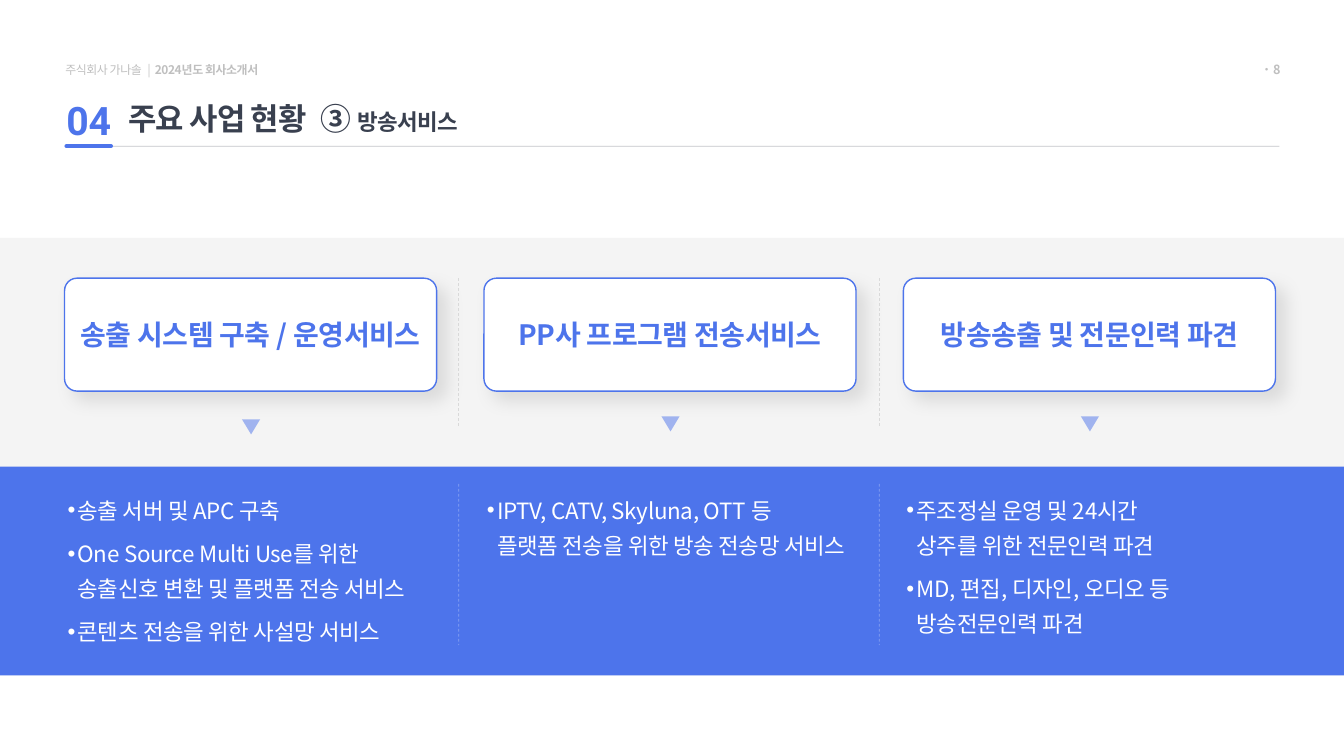
from dataclasses import dataclass, replace

from lxml.etree import SubElement
from pptx import Presentation
from pptx.dml.color import RGBColor
from pptx.enum.dml import MSO_LINE
from pptx.enum.shapes import MSO_CONNECTOR, MSO_SHAPE
from pptx.enum.text import MSO_ANCHOR, PP_ALIGN
from pptx.oxml.ns import qn
from pptx.util import Emu, Pt

PX = 9144  # 100 px to the inch
COLUMN_STEP = 416
COLUMNS = (
    ("송출 시스템 구축 / 운영서비스", 416,
     ("송출 서버 및 APC 구축",
      "One Source Multi Use를 위한\v송출신호 변환 및 플랫폼 전송 서비스",
      "콘텐츠 전송을 위한 사설망 서비스")),
    ("PP사 프로그램 전송서비스", 413,
     ("IPTV, CATV, Skyluna, OTT 등\v플랫폼 전송을 위한 방송 전송망 서비스",)),
    ("방송송출 및 전문인력 파견", 413,
     ("주조정실 운영 및 24시간\v상주를 위한 전문인력 파견",
      "MD, 편집, 디자인, 오디오 등\v방송전문인력 파견")),
)


@dataclass(frozen=True)
class TextStyle:
    size: float
    color: str
    bold: bool = False
    spacing: float = 0
    latin: str = "Noto Sans CJK KR"


class Theme:
    blue = "4D74EB"
    ink = "39404F"
    white = "FFFFFF"
    band = "F2F2F2"
    divider = "D9D9D9"
    asian = "Noto Sans CJK KR"
    company = TextStyle(8.5, "BFBFBF", spacing=-0.3)
    header = replace(company, bold=True)
    separator = replace(header, color=divider)
    page = TextStyle(9, "BFBFBF", spacing=-0.3)
    number = TextStyle(28, blue, bold=True, latin="Roboto")
    title = TextStyle(22, ink, bold=True, spacing=-0.5, latin="Roboto")
    subtitle = replace(title, size=16, latin=asian)
    card = TextStyle(20, blue, bold=True, spacing=-0.3)
    body = TextStyle(16, white, spacing=-0.2)


def px(*lengths):
    return [Emu(length * PX) for length in lengths]


def set_font(font, style):
    font.size = Pt(style.size)
    font.bold = style.bold
    font.color.rgb = RGBColor.from_string(style.color)
    font.name = style.latin
    properties = font._rPr
    properties.set("spc", str(round(style.spacing * 100)))
    SubElement(properties, qn("a:ea"), typeface=Theme.asian)


def set_alpha(fill_parent, percent):
    color = fill_parent.find(qn("a:solidFill"))[0]
    SubElement(color, qn("a:alpha"), val=str(percent * 1000))


def add_block(slide, kind, box, color, alpha=100):
    shape = slide.shapes.add_shape(kind, *px(*box))
    shape.shadow.inherit = False
    shape.fill.solid()
    shape.fill.fore_color.rgb = RGBColor.from_string(color)
    shape.line.fill.background()
    if alpha < 100:
        set_alpha(shape._element.spPr, alpha)
    return shape


def add_line(slide, start, end, color, width=0.5, alpha=100, dashed=False):
    connector = slide.shapes.add_connector(MSO_CONNECTOR.STRAIGHT, *px(*start, *end))
    connector.line.width = Pt(width)
    connector.line.color.rgb = RGBColor.from_string(color)
    if dashed:
        connector.line.dash_style = MSO_LINE.DASH
    if alpha < 100:
        set_alpha(connector.line._ln, alpha)
    SubElement(connector._element.spPr, qn("a:effectLst"))
    return connector


def add_text_box(slide, box, anchor=MSO_ANCHOR.MIDDLE, margins=(0, 0)):
    text_box = slide.shapes.add_textbox(*px(*box))
    frame = text_box.text_frame
    frame.word_wrap = False
    frame.vertical_anchor = anchor
    frame.margin_left, frame.margin_top = px(*margins)
    frame.margin_right, frame.margin_bottom = px(*margins)
    return frame


def add_runs(paragraph, pieces):
    for text, style in pieces:
        run = paragraph.add_run()
        run.text = text
        set_font(run.font, style)


def add_header(slide):
    add_line(slide, (107, 145), (1269, 145), Theme.ink, alpha=30)
    accent = add_line(slide, (66, 145), (110, 145), Theme.blue, width=3)
    accent.line._ln.set("cap", "rnd")

    company = add_text_box(slide, (55, 57, 233, 24), MSO_ANCHOR.TOP, (10, 5))
    add_runs(company.paragraphs[0], (
        ("주식회사 가나솔", Theme.company),
        (" ", replace(Theme.company, spacing=2)),
        ("|", Theme.separator),
        (" ", replace(Theme.separator, spacing=1)),
        ("2024년도 회사소개서", Theme.header),
    ))
    page = add_text_box(slide, (1119, 59, 151, 20)).paragraphs[0]
    page.alignment = PP_ALIGN.RIGHT
    add_runs(page, (("・", Theme.page), ("8", replace(Theme.page, bold=True))))

    title = add_text_box(slide, (127, 89, 1132, 57)).paragraphs[0]
    add_runs(title, (
        ("주요 사업 현황", Theme.title),
        (" ", replace(Theme.title, spacing=5)),
        ("③ ", Theme.title),
        ("방송서비스", Theme.subtitle),
    ))
    number = add_text_box(slide, (64, 90, 48, 57)).paragraphs[0]
    number.text = "04"
    number.alignment = PP_ALIGN.CENTER
    set_font(number.font, Theme.number)


def add_soft_shadow(shape):
    effects = shape._element.spPr.find(qn("a:effectLst"))
    shadow = SubElement(effects, qn("a:outerShdw"), blurRad=str(Pt(13)),
                        dist=str(Pt(9)), dir="2700000", algn="tl", rotWithShape="0")
    color = SubElement(shadow, qn("a:srgbClr"), val="000000")
    SubElement(color, qn("a:alpha"), val="10000")


def add_card(slide, left, heading):
    card = add_block(slide, MSO_SHAPE.ROUNDED_RECTANGLE, (left, 276, 369, 112), Theme.white)
    card.adjustments[0] = 0.11
    card.line.width = Pt(1)
    card.line.color.rgb = RGBColor.from_string(Theme.blue)
    add_soft_shadow(card)
    card.text_frame.word_wrap = True
    card.text_frame.vertical_anchor = MSO_ANCHOR.MIDDLE
    paragraph = card.text_frame.paragraphs[0]
    paragraph.text = heading
    paragraph.alignment = PP_ALIGN.CENTER
    paragraph.space_after = Pt(2)
    set_font(paragraph.font, Theme.card)


def add_bullets(slide, left, items):
    frame = add_text_box(slide, (left, 485, 391, 150), MSO_ANCHOR.TOP)
    for index, item in enumerate(items):
        paragraph = frame.add_paragraph() if index else frame.paragraphs[0]
        paragraph.text = item
        paragraph.line_spacing = 1.3
        paragraph.space_after = Pt(6)
        properties = paragraph._p.get_or_add_pPr()
        properties.set("marL", str(10 * PX))
        properties.set("indent", str(-10 * PX))
        bullet_color = SubElement(properties, qn("a:buClr"))
        SubElement(bullet_color, qn("a:srgbClr"), val=Theme.white)
        SubElement(properties, qn("a:buFont"), typeface="Arial")
        SubElement(properties, qn("a:buChar"), char="•")
        set_font(paragraph.font, Theme.body)


def add_column(slide, index, heading, arrow_top, items):
    offset = index * COLUMN_STEP
    add_card(slide, 64 + offset, heading)
    arrow = add_block(slide, MSO_SHAPE.ISOSCELES_TRIANGLE,
                      (240 + offset, arrow_top, 18, 15), Theme.blue, alpha=50)
    arrow.rotation = 180
    add_bullets(slide, 67 + offset, items)


def main():
    presentation = Presentation()
    presentation.slide_width, presentation.slide_height = px(1333, 750)
    slide = presentation.slides.add_slide(presentation.slide_layouts[6])
    add_header(slide)
    add_block(slide, MSO_SHAPE.RECTANGLE, (0, 236, 1333, 434), Theme.band, alpha=80)
    add_block(slide, MSO_SHAPE.RECTANGLE, (0, 463, 1333, 207), Theme.blue)
    for index, column in enumerate(COLUMNS):
        add_column(slide, index, *column)
    for x in (455, 872):
        add_line(slide, (x, 276), (x, 423), Theme.divider, dashed=True)
        add_line(slide, (x, 480), (x, 640), Theme.white, alpha=35, dashed=True)
    presentation.save("out.pptx")


if __name__ == "__main__":
    main()
